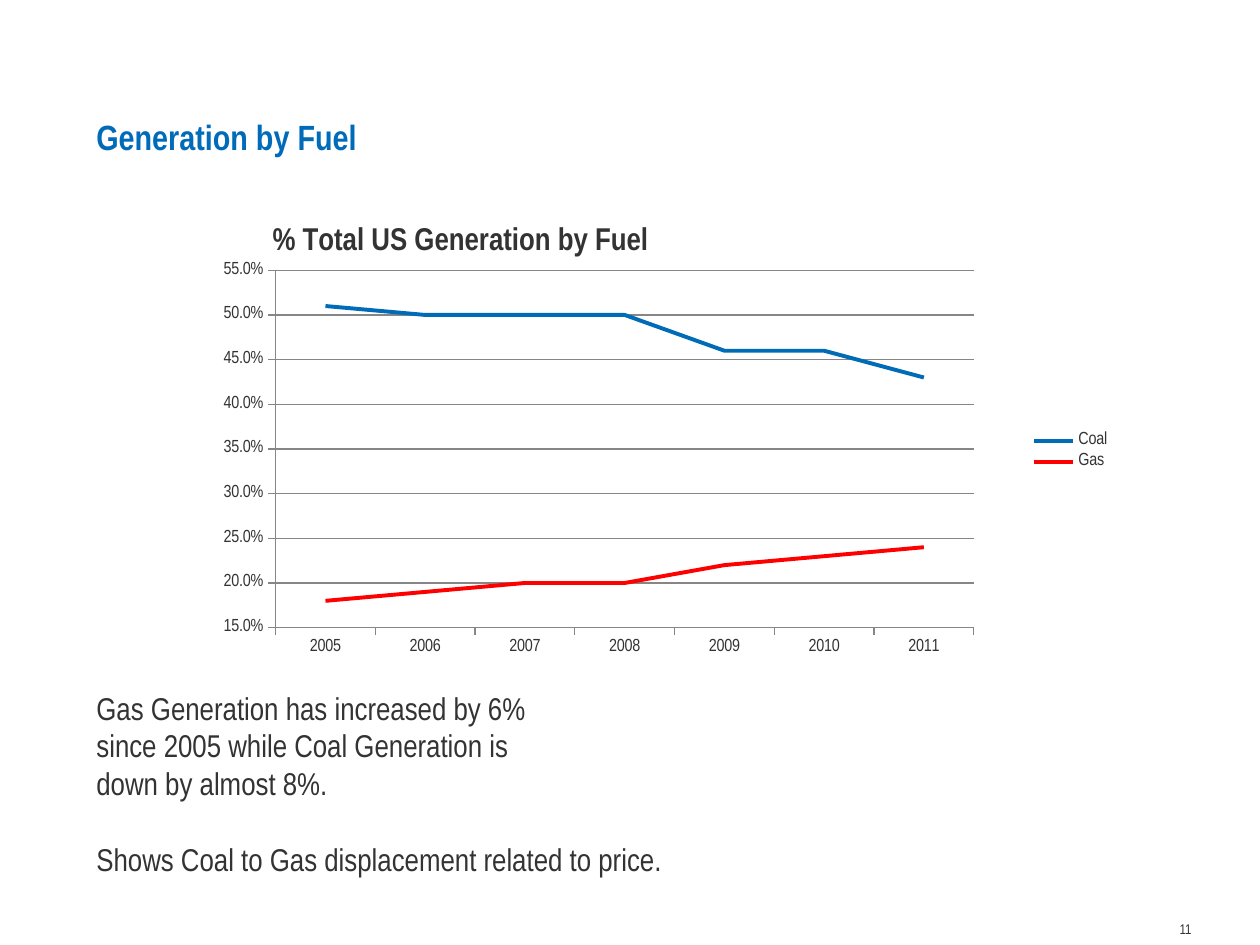
from lxml import etree
from pptx import Presentation
from pptx.chart.data import CategoryChartData
from pptx.dml.color import RGBColor
from pptx.enum import chart as ch, text
from pptx.oxml import ns
from pptx.util import Pt

COLORS = {"title": "006BB9", "body": "333333", "grid": "868686",
          "Coal": "006BB6", "Gas": "FF0000"}
FONT = "Arial Narrow"
YEARS = [str(year) for year in range(2005, 2012)]
SHARES = {
    "Coal": (0.51, 0.5, 0.5, 0.5, 0.46, 0.46, 0.43),
    "Gas": (0.18, 0.19, 0.2, 0.2, 0.22, 0.23, 0.24),
}


def rgb(name):
    """Return the palette colour of that name."""
    return RGBColor.from_string(COLORS[name])


def apply(target, **values):
    """Set each given value as an attribute of the target."""
    for name, value in values.items():
        setattr(target, name, value)


def style_font(font, size, color="body", bold=False):
    """Give a font the slide's typeface, size and colour."""
    apply(font, name=FONT, size=Pt(size), bold=bold)
    font.color.rgb = rgb(color)


def add_copy(slide, box, paragraphs, size, color="body", bold=False,
             anchor=text.MSO_ANCHOR.TOP, **layout):
    """Place a wrapped text block in the given box."""
    frame = slide.shapes.add_textbox(*map(Pt, box)).text_frame
    apply(frame, word_wrap=True, vertical_anchor=anchor)
    for index, wording in enumerate(paragraphs):
        paragraph = frame.add_paragraph() if index else frame.paragraphs[0]
        paragraph.text = wording
        style_font(paragraph.font, size, color, bold)
        apply(paragraph, **layout)
    return frame


def set_layout(parent, position, **values):
    """Give a chart part a manual layout at a child position."""
    for old in parent.findall(ns.qn("c:layout")):
        parent.remove(old)
    layout = etree.Element(ns.qn("c:layout"))
    manual = etree.SubElement(layout, ns.qn("c:manualLayout"))
    for name, value in values.items():
        etree.SubElement(manual, ns.qn(f"c:{name}")).set("val", str(value))
    parent.insert(position, layout)


def add_fuel_chart(slide, box):
    """Place the line chart of generation shares in the given box."""
    data = CategoryChartData(number_format="0.0%")
    data.categories = YEARS
    for fuel, shares in SHARES.items():
        data.add_series(fuel, shares)
    chart = slide.shapes.add_chart(
        ch.XL_CHART_TYPE.LINE, *map(Pt, box), data).chart
    style_font(chart.font, 10)

    heading = chart.chart_title.text_frame.paragraphs[0].add_run()
    heading.text = "% Total US Generation by Fuel"
    style_font(heading.font, 18, bold=True)
    chart.chart_title.include_in_layout = True
    width, height = box[2:]
    set_layout(chart.chart_title._element, 1, xMode="edge", yMode="edge",
               x=74.5 / width, y=5 / height)
    set_layout(chart.plots[0]._element.getparent(), 0,
               layoutTarget="inner", xMode="edge", yMode="edge",
               x=79.5 / width, y=34.5 / height,
               w=399 / width, h=204.25 / height)

    chart.has_legend = True
    apply(chart.legend, position=ch.XL_LEGEND_POSITION.RIGHT,
          include_in_layout=False)
    style_font(chart.legend.font, 10)

    shares_axis = chart.value_axis
    apply(shares_axis, minimum_scale=0.15, maximum_scale=0.55,
          major_unit=0.05, has_major_gridlines=True)
    apply(shares_axis.tick_labels, number_format="0.0%",
          number_format_is_linked=False)
    for axis in (chart.category_axis, shares_axis):
        apply(axis, major_tick_mark=ch.XL_TICK_MARK.OUTSIDE,
              minor_tick_mark=ch.XL_TICK_MARK.NONE)
        style_font(axis.tick_labels.font, 10)
    for rule in (chart.category_axis, shares_axis, shares_axis.major_gridlines):
        rule.format.line.width = Pt(0.75)
        rule.format.line.color.rgb = rgb("grid")

    chart.plots[0].vary_by_categories = False
    for fuel in chart.plots[0].series:
        fuel.smooth = False
        fuel.marker.style = ch.XL_MARKER_STYLE.NONE
        fuel.format.line.width = Pt(2.25)
        fuel.format.line.color.rgb = rgb(fuel.name)


def add_findings(slide, box):
    """Place the two findings below the chart."""
    findings = add_copy(slide, box, [
        "Gas Generation has increased by 6%\vsince 2005 while Coal Generation is"
        "\vdown by almost 8%.",
        "Shows Coal to Gas displacement related to price.",
    ], 18)
    findings.paragraphs[1].space_before = Pt(21.5)


def build_slide(deck):
    """Add the generation by fuel slide to the deck."""
    slide = deck.slides.add_slide(deck.slide_layouts[6])
    add_copy(slide, (48, 48, 648, 63.5), ["Generation by Fuel"], 20, "title",
             True, text.MSO_ANCHOR.MIDDLE, line_spacing=0.85)
    add_copy(slide, (520, 522.5, 168, 30), ["11"], 8,
             alignment=text.PP_ALIGN.RIGHT)
    add_fuel_chart(slide, (78, 120, 564, 276))
    add_findings(slide, (48, 390, 630, 117))


def main():
    """Build and save the deck."""
    deck = Presentation()
    apply(deck, slide_width=Pt(720), slide_height=Pt(540))
    build_slide(deck)
    deck.save("out.pptx")


if __name__ == "__main__":
    main()
